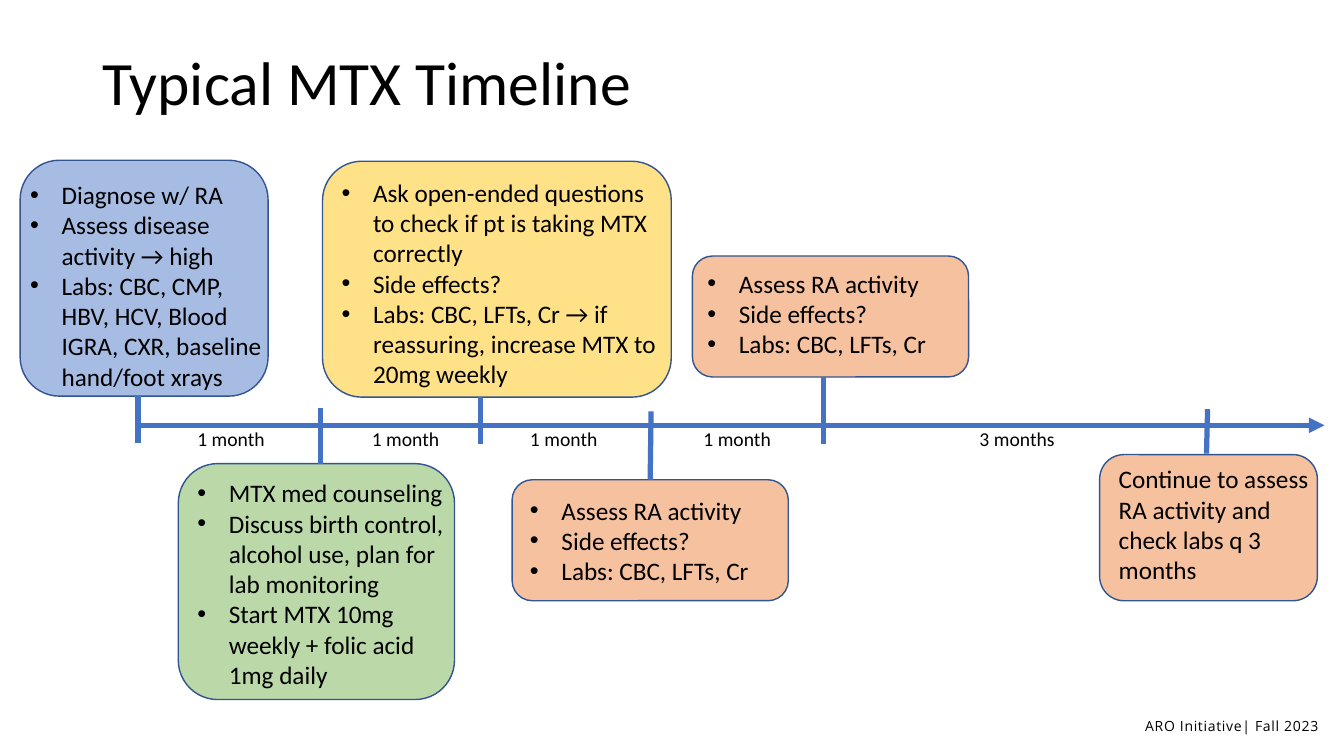
from dataclasses import dataclass

import lxml.etree
import pptx
import pptx.dml.color
import pptx.enum.dml
import pptx.enum.shapes
import pptx.enum.text
import pptx.oxml.ns
import pptx.slide
import pptx.text.text
import pptx.util

Box = tuple[float, float, float, float]
Point = tuple[float, float]


@dataclass(frozen=True)
class Theme:
    ink: str = "000000"
    axis: str = "4472C4"
    edge: str = "325491"
    blue: str = "4472C4"
    green: str = "70AD47"
    gold: str = "FFC000"
    orange: str = "ED7D31"
    alpha: int = 47
    font: str = "Calibri"
    foot_font: str = "Open Sans"
    title: float = 44
    body: float = 18
    label: float = 14
    foot: float = 10
    stroke: float = 3.75


@dataclass(frozen=True)
class Card:
    box: Box
    text: Box
    fill: str
    lines: tuple[str, ...]
    stem: tuple[Point, Point]
    bullet: bool = True


@dataclass(frozen=True)
class Label:
    left: float
    text: str


THEME = Theme()
AXIS_Y = 303.8
START_X = 98.6
END_X = 946.1
INDENT = 22.5
CHECK = ("Assess RA activity", "Side effects?", "Labs: CBC, LFTs, Cr")

CARDS = (
    Card((14.4, 114.5, 177.1, 168.5), (14.4, 124.6, 186.5, 181.4), THEME.blue,
         ("Diagnose w/ RA", "Assess disease activity → high",
          "Labs: CBC, CMP, HBV, HCV, Blood IGRA, CXR, baseline hand/foot xrays"),
         ((START_X, 283), (START_X, 316.1))),
    Card((127.4, 331.2, 197.3, 168.5), (133.9, 337.7, 197.3, 159.8), THEME.green,
         ("MTX med counseling",
          "Discuss birth control, alcohol use, plan for lab monitoring",
          "Start MTX 10mg weekly + folic acid 1mg daily"),
         ((228.8, 291.6), (228.8, 331.2))),
    Card((230.4, 115.2, 249.1, 168.5), (236.9, 123.1, 243.4, 159.8), THEME.gold,
         ("Ask open-ended questions to check if pt is taking MTX correctly",
          "Side effects?",
          "Labs: CBC, LFTs, Cr → if reassuring, increase MTX to 20mg weekly"),
         ((343.4, 283.7), (343.4, 317.5))),
    Card((365.8, 342.7, 197.3, 86.4), (371.5, 349.9, 172.8, 72.7), THEME.orange,
         CHECK, ((465.1, 293.8), (464.4, 342.7))),
    Card((494.6, 182.9, 197.3, 86.4), (498.2, 187.9, 243.4, 72.7), THEME.orange,
         CHECK, ((588.2, 269.3), (588.2, 316.8))),
    Card((785.5, 324.7, 155.5, 104.4), (792, 327.6, 154.1, 94.3), THEME.orange,
         ("Continue to assess RA activity and check labs q 3 months",),
         ((862.6, 292.3), (861.8, 324)), bullet=False),
)

LABELS = (
    Label(133.9, "1 month"),
    Label(258.5, "1 month"),
    Label(371.5, "1 month"),
    Label(495.4, "1 month"),
    Label(692.6, "3 months"),
)


def color(code: str) -> pptx.dml.color.RGBColor:
    return pptx.dml.color.RGBColor.from_string(code)


def place(box: Box) -> list[pptx.util.Length]:
    return [pptx.util.Pt(side) for side in box]


def add_node(parent: lxml.etree._Element, tag: str, **attrs: str) -> None:
    lxml.etree.SubElement(parent, pptx.oxml.ns.qn(tag), attrs)


def add_text(slide: pptx.slide.Slide, box: Box, lines: tuple[str, ...], size: float,
             bullet: bool = False, font: str = THEME.font) -> pptx.text.text.TextFrame:
    frame = slide.shapes.add_textbox(*place(box)).text_frame
    frame.word_wrap = True
    frame.text = "\n".join(lines)
    for para in frame.paragraphs:
        para.font.name = font
        para.font.size = pptx.util.Pt(size)
        para.font.color.rgb = color(THEME.ink)
        if bullet:
            props = para._p.get_or_add_pPr()
            indent = pptx.util.Pt(INDENT)
            props.set("marL", str(indent))
            props.set("indent", str(-indent))
            mark = lxml.etree.Element(pptx.oxml.ns.qn("a:buChar"), char="•")
            face = lxml.etree.Element(pptx.oxml.ns.qn("a:buFont"), typeface="Arial")
            props.insert(0, mark)
            props.insert(0, face)
    return frame


def add_card(slide: pptx.slide.Slide, card: Card) -> None:
    kind = pptx.enum.shapes.MSO_SHAPE.ROUNDED_RECTANGLE
    shape = slide.shapes.add_shape(kind, *place(card.box))
    shape.shadow.inherit = False
    shape.fill.solid()
    shape.fill.fore_color.rgb = color(card.fill)
    tint = shape._element.spPr.find(".//" + pptx.oxml.ns.qn("a:srgbClr"))
    add_node(tint, "a:alpha", val=str(THEME.alpha * 1000))
    shape.line.color.rgb = color(THEME.edge)
    shape.line.width = pptx.util.Pt(1)
    add_text(slide, card.text, card.lines, THEME.body, card.bullet)


def add_line(slide: pptx.slide.Slide, start: Point, end: Point,
             arrow: bool = False) -> None:
    kind = pptx.enum.shapes.MSO_CONNECTOR.STRAIGHT
    line = slide.shapes.add_connector(kind, *place((*start, *end)))
    line.line.color.rgb = color(THEME.axis)
    line.line.width = pptx.util.Pt(THEME.stroke)
    if arrow:
        add_node(line.line._get_or_add_ln(), "a:tailEnd", type="triangle")
    add_node(line._element.spPr, "a:effectLst")


def add_foot(slide: pptx.slide.Slide) -> None:
    frame = add_text(slide, (762.5, 512.6, 179.3, 12.2),
                     ("ARO Initiative| Fall 2023",), THEME.foot, font=THEME.foot_font)
    frame.margin_left = frame.margin_right = 0
    frame.margin_top = frame.margin_bottom = 0
    para = frame.paragraphs[0]
    para.alignment = pptx.enum.text.PP_ALIGN.RIGHT
    para.line_spacing = pptx.util.Pt(12)
    para.runs[0]._r.get_or_add_rPr().set("spc", "50")


def main() -> None:
    deck = pptx.Presentation()
    deck.slide_width = pptx.util.Pt(960)
    deck.slide_height = pptx.util.Pt(540)
    slide = deck.slides.add_slide(deck.slide_layouts[6])

    title = add_text(slide, (66.2, 8.6, 828, 104.4), ("Typical MTX Timeline",),
                     THEME.title)
    title.vertical_anchor = pptx.enum.text.MSO_ANCHOR.MIDDLE
    title.paragraphs[0].line_spacing = 0.9

    for card in CARDS:
        add_card(slide, card)
    add_line(slide, (START_X, AXIS_Y), (END_X, AXIS_Y), arrow=True)
    for card in CARDS:
        add_line(slide, *card.stem)
    for label in LABELS:
        add_text(slide, (label.left, 301.5, 84.2, 24.5), (label.text,), THEME.label)
    add_foot(slide)
    deck.save("out.pptx")


if __name__ == "__main__":
    main()
